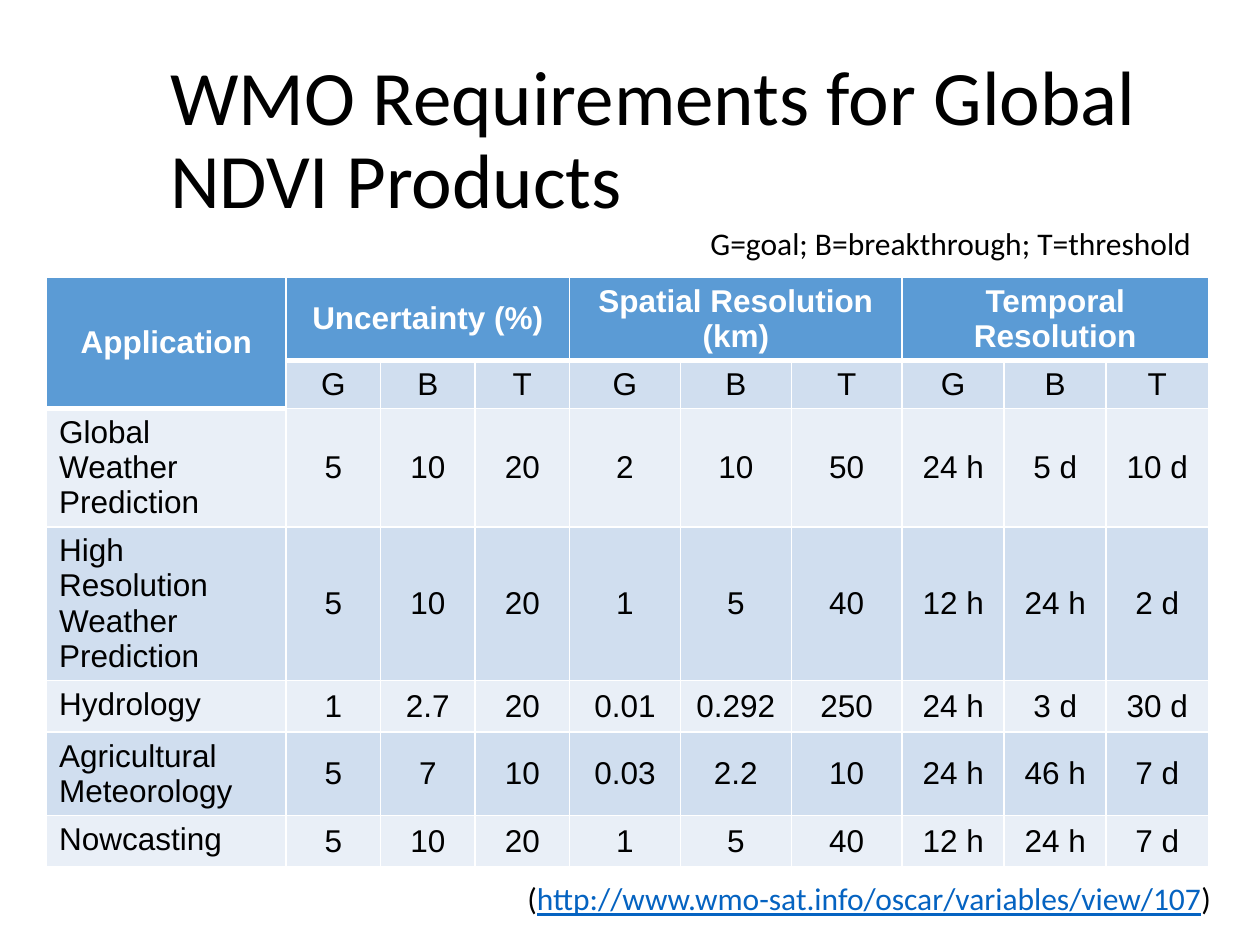
from lxml.etree import SubElement
from pptx import Presentation
from pptx.dml.color import RGBColor
from pptx.enum.text import MSO_ANCHOR, MSO_AUTO_SIZE, PP_ALIGN
from pptx.oxml.ns import qn
from pptx.util import Inches, Pt

TITLE = "WMO Requirements for Global NDVI Products"
LEGEND = "G=goal; B=breakthrough; T=threshold"
SOURCE = "http://www.wmo-sat.info/oscar/variables/view/107"
GROUPS = ["Uncertainty (%)", "Spatial Resolution (km)", "Temporal Resolution"]
LEVELS = ["G", "B", "T"]
APPLICATIONS = [
    ("Global Weather Prediction", "5", "10", "20", "2", "10", "50", "24 h", "5 d", "10 d"),
    ("High Resolution Weather Prediction", "5", "10", "20", "1", "5", "40", "12 h", "24 h", "2 d"),
    ("Hydrology", "1", "2.7", "20", "0.01", "0.292", "250", "24 h", "3 d", "30 d"),
    ("Agricultural Meteorology", "5", "7", "10", "0.03", "2.2", "10", "24 h", "46 h", "7 d"),
    ("Nowcasting", "5", "10", "20", "1", "5", "40", "12 h", "24 h", "7 d"),
]
COLORS = {"header": "5B9BD5", "band": "D0DEEF", "light": "E9EFF7",
          "white": "FFFFFF", "black": "000000", "link": "0563C1"}
COL_WIDTHS = [1.9] + [w for w in (0.75, 0.88, 0.81) for _ in LEVELS]
ROW_HEIGHTS = [0.2] * 2 + [0.41] * len(APPLICATIONS)


def rgb(name):
    return RGBColor.from_string(COLORS[name])


def write(tf, text, size=18, font="Calibri", color="black", bold=False,
          underline=False, align=PP_ALIGN.LEFT, spacing=None):
    p = tf.paragraphs[0]
    p.alignment = align
    if spacing:
        p.line_spacing = spacing
    r = p.add_run()
    r.text = text
    r.font.size, r.font.name = Pt(size), font
    r.font.bold, r.font.underline = bold, underline
    r.font.color.rgb = rgb(color)


def text_box(slide, left, top, width, height):
    tf = slide.shapes.add_textbox(*map(Inches, (left, top, width, height))).text_frame
    tf.word_wrap = True
    return tf


def style_cell(cell, fill, top=1, bottom=1):
    cell.fill.solid()
    cell.fill.fore_color.rgb = rgb(fill)
    tc_pr = cell._tc.get_or_add_tcPr()
    for i, (side, width) in enumerate(zip("LRTB", (1, 1, top, bottom))):
        ln = SubElement(tc_pr, qn("a:ln" + side), w=str(Pt(width)))
        line_fill = SubElement(ln, qn("a:solidFill"))
        SubElement(line_fill, qn("a:srgbClr"), val=COLORS["white"])
        tc_pr.insert(i, ln)


def build_table(slide):
    header = ["Application"] + [t for g in GROUPS for t in (g, "", "")]
    rows = [header, [""] + LEVELS * len(GROUPS), *APPLICATIONS]
    table = slide.shapes.add_table(
        len(rows), len(header), Inches(0.37), Inches(2.2),
        Inches(sum(COL_WIDTHS)), Inches(sum(ROW_HEIGHTS))).table
    for col, width in zip(table.columns, COL_WIDTHS):
        col.width = Inches(width)
    for row, height in zip(table.rows, ROW_HEIGHTS):
        row.height = Inches(height)
    for i, row in enumerate(rows):
        for j, text in enumerate(row):
            cell = table.cell(i, j)
            head_rows = 2 if j == 0 else 1
            is_head = i < head_rows
            fill = "header" if is_head else "band" if i % 2 else "light"
            style_cell(cell, fill, top=3 if i == head_rows else 1,
                       bottom=3 if is_head else 1)
            is_name = j == 0 and not is_head
            cell.vertical_anchor = MSO_ANCHOR.TOP if is_name else MSO_ANCHOR.MIDDLE
            if text:
                write(cell.text_frame, text, font="Arial", bold=is_head,
                      color="white" if is_head else "black",
                      align=PP_ALIGN.LEFT if is_name else PP_ALIGN.CENTER)
    table.cell(0, 0).merge(table.cell(1, 0))
    for j in range(1, len(header), len(LEVELS)):
        table.cell(0, j).merge(table.cell(0, j + len(LEVELS) - 1))


def main():
    prs = Presentation()
    prs.slide_width, prs.slide_height = Inches(10), Inches(7.5)
    s = prs.slides.add_slide(prs.slide_layouts[5])

    title = s.shapes.title
    title.left, title.top, title.width, title.height = map(Inches, (1.25, 0.4, 8.06, 1.45))
    title.text_frame.auto_size = MSO_AUTO_SIZE.NONE
    title.text_frame.vertical_anchor = MSO_ANCHOR.MIDDLE
    write(title.text_frame, TITLE, size=44, spacing=0.9)

    build_table(s)
    write(text_box(s, 5.54, 1.73, 4.06, 0.4), LEGEND)
    source = text_box(s, 4.01, 6.93, 5.7, 0.4)
    for text, color in (("(", "black"), (SOURCE, "link"), (")", "black")):
        write(source, text, color=color, underline=color == "link", align=PP_ALIGN.RIGHT)

    prs.save("out.pptx")


if __name__ == "__main__":
    main()
